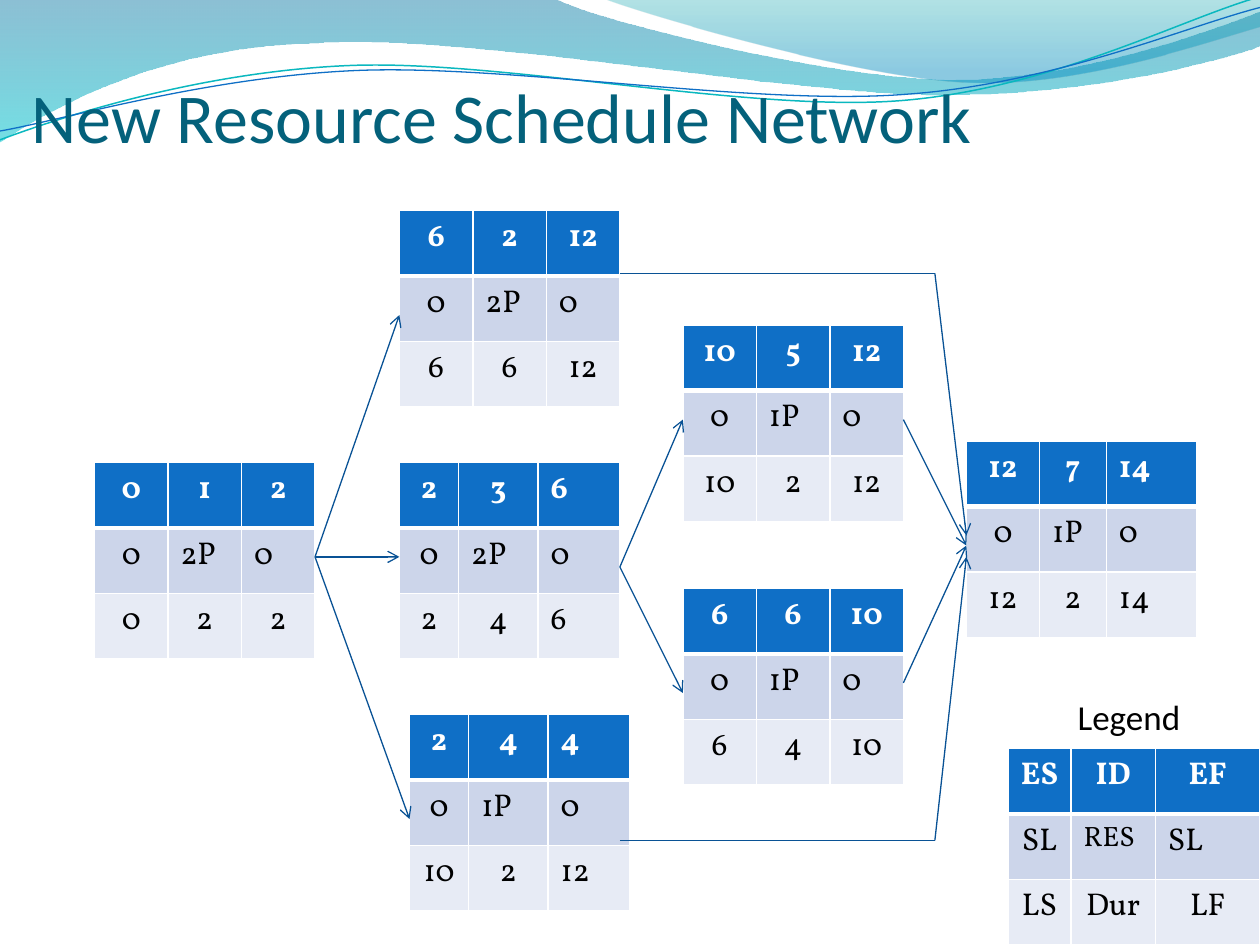
from math import cos, radians, sin
from lxml import etree
from pptx import Presentation
from pptx.dml.color import RGBColor
from pptx.enum.shapes import MSO_CONNECTOR
from pptx.enum.text import MSO_ANCHOR, PP_ALIGN
from pptx.oxml.ns import qn
from pptx.util import Inches, Pt

LEFT, MID = PP_ALIGN.LEFT, PP_ALIGN.CENTER
LINE = MSO_CONNECTOR.STRAIGHT

# Content: left, top, column widths, alignment of the last column, rows
EVEN, SLIM = (1.75 / 3,) * 3, (0.47, 0.63, 0.65)
NODES = [
    (0.75, 3.67, EVEN, MID, ["0 1 2", "0 2P 0", "0 2 2"]),
    (8, 5.94, (0.5, 0.67, 0.83), MID, ["ES ID EF", "SL RES SL", "LS Dur LF"]),
    (3.17, 1.67, EVEN, MID, ["6 2 12", "0 2P 0", "6 6 12"]),
    (3.17, 3.67, SLIM, LEFT, ["2 3 6", "0 2P 0", "2 4 6"]),
    (5.42, 2.58, EVEN, MID, ["10 5 12", "0 1P 0", "10 2 12"]),
    (7.67, 3.5, (0.58, 0.53, 0.72), LEFT, ["12 7 14", "0 1P 0", "12 2 14"]),
    (5.42, 4.67, EVEN, MID, ["6 6 10", "0 1P 0", "6 4 10"]),
    (3.25, 5.67, SLIM, LEFT, ["2 4 4", "0 1P 0", "10 2 12"]),
]
ROW = 0.52
FILLS = ["0F6FC6", "CCD5EA", "E7EBF5"]
EDGES = {"a:lnL": 1, "a:lnR": 1, "a:lnT": 1, "a:lnB": 3}

# Routes between nodes; each ends in an arrowhead
START, FORK, GOAL = (2.5, 4.42), (4.92, 4.5), (7.67, 4.33)
ROUTES = [
    [START, (3.17, 2.5)],
    [START, (3.17, 4.42)],
    [START, (3.25, 6.5)],
    [FORK, (5.42, 3.33)],
    [FORK, (5.42, 5.5)],
    [(7.17, 3.33), GOAL],
    [(7.17, 5.42), GOAL],
    [(4.92, 2.17), (7.42, 2.17), (7.67, 4.25)],
    [(4.92, 6.67), (7.42, 6.67), (7.67, 4.42)],
]

# Header waves: a pair is a straight step, six numbers are a Bezier step
BANDS = [
    ([(0, 0), (4.4, -0.01), (4.76, 0.17, 6.64, 0.63, 7.58, 0.63),
      (8.53, 0.63, 9.58, 0.26, 10, 0.09), (10.01, 0.36),
      (9.83, 0.44, 8.7, 0.76, 7.46, 0.75),
      (6.22, 0.75, 3.82, 0.28, 2.57, 0.34),
      (1.29, 0.36, 0.46, 0.83, -0.01, 1.13), (0, 0)],
     [(0, "0074A1", 45), (1, "00C6CF", 55)]),
    ([(4.79, -0.01), (5.09, 0.11, 6.82, 0.62, 7.69, 0.65),
      (8.56, 0.69, 9.61, 0.32, 10, 0.21), (10, 0), (4.79, -0.01)],
     [(0, "00A1A9", 30), (0.8, "008BBF", 45)]),
]
TILT = 2.7
CURVES = [
    ([(0, 1.11), (0.48, 0.93, 1.58, 0.57, 2.77, 0.52),
      (3.95, 0.47, 5.93, 0.89, 7.13, 0.8),
      (8.33, 0.71, 9.38, 0.15, 9.98, -0.02)], (4.99, 0.57), "0AB8BF", 0.85),
    ([(0, 1.04), (0.47, 0.96, 1.64, 0.61, 2.83, 0.56),
      (4.03, 0.51, 5.97, 0.84, 7.17, 0.75),
      (8.36, 0.67, 9.41, 0.21, 10, 0.06)], (5, 0.59), "0F6FC6", 0.75),
]


def rgb(code):
    return RGBColor.from_string(code)


def style(para, name, size, color, bold=False, align=LEFT):
    para.alignment = align
    look = {"name": name, "size": Pt(size), "bold": bold}
    for key, val in look.items():
        setattr(para.font, key, val)
    para.font.color.rgb = rgb(color)


def wave(slide, steps, close):
    """Lay all points as line steps, then join threes into Bezier steps."""
    pts = [(Inches(s[i]), Inches(s[i + 1])) for s in steps for i in range(0, len(s), 2)]
    pen = slide.shapes.build_freeform(*pts[0])
    pen.add_line_segments(pts[1:], close=close)
    shape = pen.convert_to_shape()
    shape.shadow.inherit = False
    legs = iter(list(shape._element.iter(qn("a:lnTo"))))
    for step in steps[1:]:
        leg = next(legs)
        if len(step) == 6:
            leg.tag = qn("a:cubicBezTo")
            for _ in range(2):
                extra = next(legs)
                leg.append(extra[0])
                extra.getparent().remove(extra)
    return shape


def band(slide, steps, stops):
    shape = wave(slide, steps, True)
    shape.line.fill.background()
    shape.fill.gradient()
    shape.fill.gradient_angle = 270
    for stop, (pos, color, _) in zip(shape.fill.gradient_stops, stops):
        stop.position = pos
        stop.color.rgb = rgb(color)
    for node, (_, _, alpha) in zip(shape._element.iter(qn("a:srgbClr")), stops):
        etree.SubElement(node, qn("a:alpha"), val=str(alpha * 1000))


def turn(step, mid):
    """Turn the points of a step clockwise by TILT about mid."""
    c, s = cos(radians(TILT)), sin(radians(TILT))
    out = []
    for x, y in zip(step[::2], step[1::2]):
        dx, dy = x - mid[0], y - mid[1]
        out += [mid[0] + dx * c - dy * s, mid[1] + dx * s + dy * c]
    return out


def curve(slide, steps, mid, color, width):
    shape = wave(slide, [turn(step, mid) for step in steps], False)
    shape.rotation = 360 - TILT
    shape.fill.background()
    shape.line.color.rgb = rgb(color)
    shape.line.width = Pt(width)


def edge(cell):
    props = cell._tc.get_or_add_tcPr()
    for i, (tag, width) in enumerate(EDGES.items()):
        line = etree.Element(qn(tag), w=str(Pt(width)))
        fill = etree.SubElement(line, qn("a:solidFill"))
        etree.SubElement(fill, qn("a:srgbClr"), val="FFFFFF")
        props.insert(i, line)


def grid(slide, left, top, cols, last, rows):
    box = [Inches(v) for v in (left, top, sum(cols), ROW * len(rows))]
    table = slide.shapes.add_table(len(rows), len(cols), *box).table
    for col, width in zip(table.columns, cols):
        col.width = Inches(width)
    for r, row in enumerate(rows):
        table.rows[r].height = Inches(ROW)
        for c, text in enumerate(row.split()):
            cell = table.cell(r, c)
            cell.text = text
            cell.fill.solid()
            cell.fill.fore_color.rgb = rgb(FILLS[r])
            if r == 0:
                edge(cell)
            align = LEFT if r == 1 and c else last if c == 2 else MID
            style(cell.text_frame.paragraphs[0], "Vollkorn", 16 if text == "RES" else 18,
                  "000000" if r else "FFFFFF", r == 0, align)


def link(slide, start, end, arrow):
    line = slide.shapes.add_connector(LINE, *(Inches(v) for v in start + end))
    line.line.color.rgb = rgb("095295")
    line.line.width = Pt(0.75)
    if arrow:
        etree.SubElement(line.line._get_or_add_ln(), qn("a:tailEnd"), type="arrow")
    etree.SubElement(line._element.spPr, qn("a:effectLst"))


def main():
    prs = Presentation()
    prs.slide_width, prs.slide_height = Inches(10), Inches(7.5)
    slide = prs.slides.add_slide(prs.slide_layouts[5])

    # Header waves
    for item in BANDS:
        band(slide, *item)
    for item in CURVES:
        curve(slide, *item)

    # Title, brought in front of the waves
    title = slide.shapes.title
    slide.shapes._spTree.append(title._element)
    title.left, title.top = Inches(0.25), Inches(0.33)
    title.width, title.height = Inches(9.75), Inches(0.92)
    frame = title.text_frame
    frame.text = "New Resource Schedule Network"
    frame.vertical_anchor = MSO_ANCHOR.BOTTOM
    frame.margin_left = frame.margin_right = frame.margin_bottom = 0
    style(frame.paragraphs[0], "Calibri", 40, "04617B")

    # Network nodes and legend
    for node in NODES:
        grid(slide, *node)
    box = [Inches(v) for v in (8.25, 5.5, 1.42, 0.42)]
    frame = slide.shapes.add_textbox(*box).text_frame
    frame.word_wrap = True
    frame.vertical_anchor = MSO_ANCHOR.MIDDLE
    frame.text = "Legend"
    frame.paragraphs[0].line_spacing = 0.9
    style(frame.paragraphs[0], "Calibri", 20, "000000", align=MID)

    # Routes
    for route in ROUTES:
        for start, end in zip(route, route[1:]):
            link(slide, start, end, end == route[-1])

    prs.save("out.pptx")


if __name__ == "__main__":
    main()
